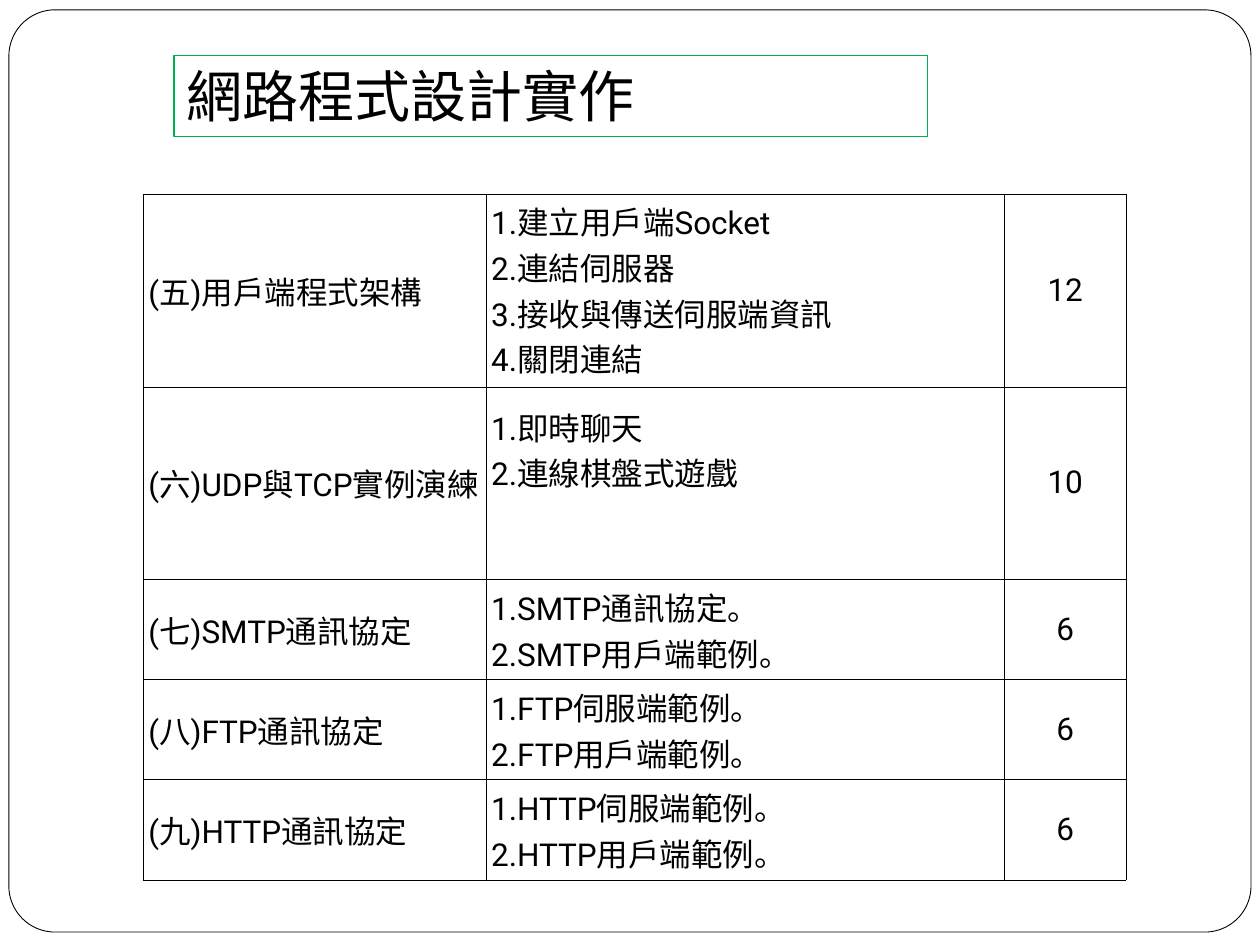
from dataclasses import dataclass

from lxml.etree import SubElement
from pptx import Presentation
from pptx.dml.color import RGBColor
from pptx.enum.shapes import MSO_SHAPE as Preset
from pptx.enum.text import MSO_ANCHOR as Anchor, MSO_AUTO_SIZE as AutoSize, PP_ALIGN as Align
from pptx.oxml.ns import qn
from pptx.util import Cm, Pt

COLORS = {"ink": "000000", "paper": "FFFFFF", "title_line": "00B050"}
BODY_FONT, TITLE_FONT = "Roboto", "Times New Roman"
COLUMN_WIDTHS = (6.91, 10.45, 2.45)
BORDER_TAGS = ("a:lnL", "a:lnR", "a:lnT", "a:lnB")


@dataclass
class Unit:
    """One course unit: a row of the table."""
    name: str
    topics: list[str]
    hours: str
    height: float
    topic_anchor: Anchor = Anchor.MIDDLE
    topic_top: float = 0.08


UNITS = [
    Unit("(五)用戶端程式架構",
         ["1.建立用戶端Socket", "2.連結伺服器", "3.接收與傳送伺服端資訊", "4.關閉連結"],
         "12", 3.88, Anchor.TOP),
    Unit("(六)UDP與TCP實例演練", ["1.即時聊天", "2.連線棋盤式遊戲"],
         "10", 3.88, Anchor.TOP, 0.34),
    Unit("(七)SMTP通訊協定", ["1.SMTP通訊協定。", "2.SMTP用戶端範例。"], "6", 2.02),
    Unit("(八)FTP通訊協定", ["1.FTP伺服端範例。", "2.FTP用戶端範例。"], "6", 2.02),
    Unit("(九)HTTP通訊協定", ["1.HTTP伺服端範例。", "2.HTTP用戶端範例。"], "6", 2.02),
]


def color(name: str) -> RGBColor:
    return RGBColor.from_string(COLORS[name])


def write_lines(frame, lines: list[str], font: str, size: float, align=Align.LEFT) -> None:
    for index, line in enumerate(lines):
        paragraph = frame.paragraphs[0] if index == 0 else frame.add_paragraph()
        paragraph.alignment = align
        run = paragraph.add_run()
        run.text = line
        run.font.name = font
        run.font.size = Pt(size)
        run.font.color.rgb = color("ink")


def add_box(slide, preset: Preset, box: tuple, line: str, width: float):
    shape = slide.shapes.add_shape(preset, *(Cm(length) for length in box))
    shape.shadow.inherit = False
    shape.line.color.rgb = color(line)
    shape.line.width = Pt(width)
    return shape


def add_borders(cell) -> None:
    properties = cell._tc.get_or_add_tcPr()
    for tag in BORDER_TAGS:
        border = SubElement(properties, qn(tag), w=str(Pt(0.5)))
        fill = SubElement(border, qn("a:solidFill"))
        SubElement(fill, qn("a:srgbClr"), val=COLORS["ink"])


def fill_cell(cell, lines: list[str], align=Align.LEFT,
              anchor=Anchor.MIDDLE, top: float = 0.08) -> None:
    add_borders(cell)
    cell.fill.background()
    cell.margin_left = cell.margin_right = Cm(0.1)
    cell.margin_top, cell.margin_bottom = Cm(top), Cm(0.08)
    cell.vertical_anchor = anchor
    write_lines(cell.text_frame, lines, BODY_FONT, 18, align)


def add_unit_table(slide, units: list[Unit]) -> None:
    table = slide.shapes.add_table(
        len(units), len(COLUMN_WIDTHS), Cm(2.89), Cm(3.92),
        Cm(sum(COLUMN_WIDTHS)), Cm(sum(unit.height for unit in units))).table
    table.first_row = table.horz_banding = False
    for column, width in zip(table.columns, COLUMN_WIDTHS):
        column.width = Cm(width)
    for row, unit in zip(table.rows, units):
        row.height = Cm(unit.height)
        name, topics, hours = row.cells
        fill_cell(name, [unit.name])
        fill_cell(topics, unit.topics, anchor=unit.topic_anchor, top=unit.topic_top)
        fill_cell(hours, [unit.hours], Align.CENTER)


def main() -> None:
    presentation = Presentation()
    presentation.slide_width, presentation.slide_height = Cm(25.4), Cm(19.05)
    slide = presentation.slides.add_slide(presentation.slide_layouts[6])

    # Rounded page frame
    frame = add_box(slide, Preset.ROUNDED_RECTANGLE, (0.18, 0.2, 25.04, 18.59), "ink", 0.5)
    frame.adjustments[0] = 0.05
    frame.fill.solid()
    frame.fill.fore_color.rgb = color("paper")

    # Course units
    add_unit_table(slide, UNITS)

    # Title
    title = add_box(slide, Preset.RECTANGLE, (3.51, 1.12, 15.19, 1.63), "title_line", 0.75)
    title.fill.background()
    title.text_frame.word_wrap = True
    title.text_frame.auto_size = AutoSize.SHAPE_TO_FIT_TEXT
    title.text_frame.vertical_anchor = Anchor.TOP
    write_lines(title.text_frame, ["網路程式設計實作"], TITLE_FONT, 32)

    presentation.save("out.pptx")


if __name__ == "__main__":
    main()
